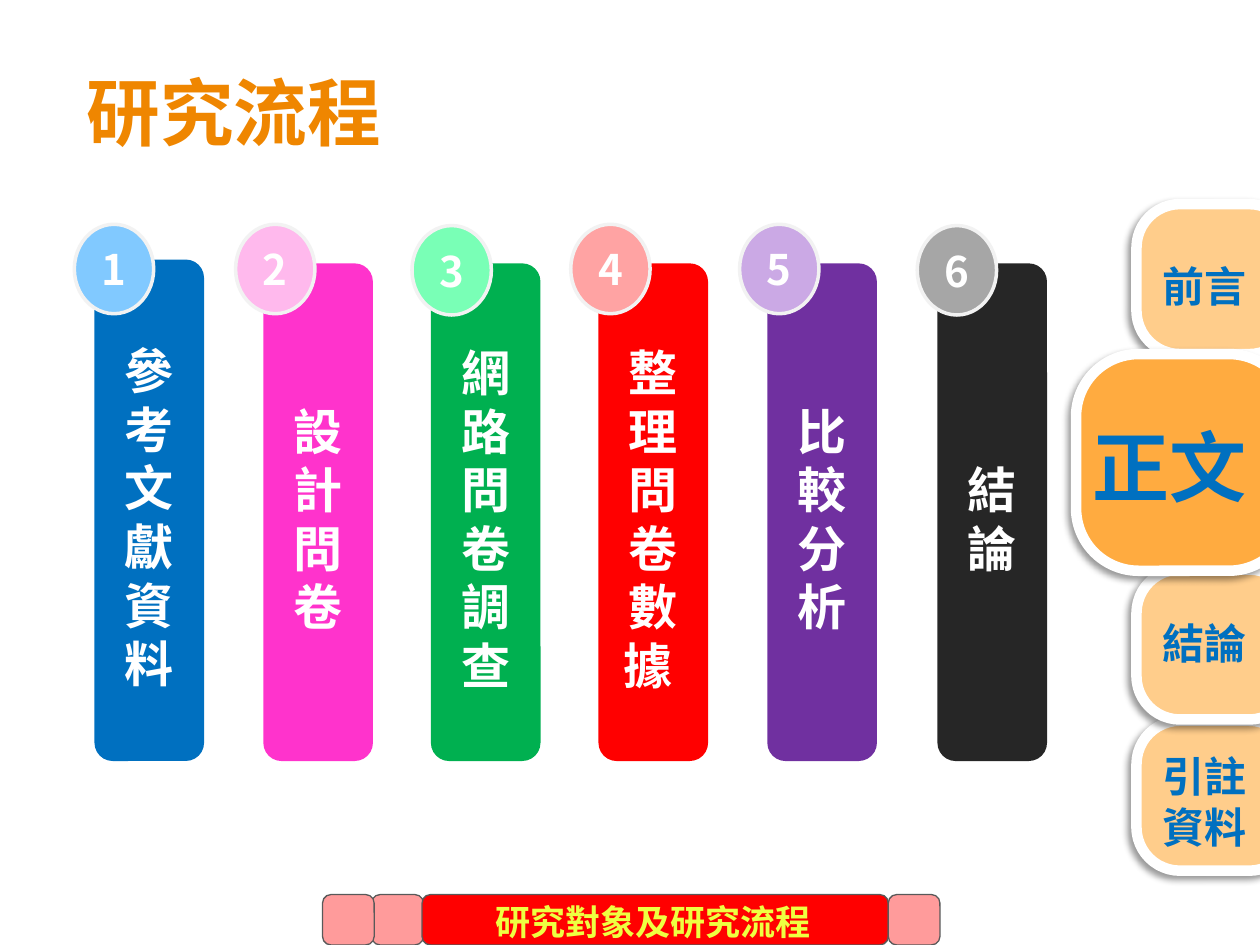
from pptx import Presentation
from pptx import util as u
from pptx.dml.color import RGBColor
from pptx.enum import shapes, text
from pptx.oxml import parse_xml
from pptx.oxml.ns import nsdecls, qn
from pptx.util import Inches

COLORS = {
    "title": "EF8600", "white": "FFFFFF", "badge_line": "F2F2F2",
    "tab": "FFCD8B", "tab_active": "FFAB40", "tab_text": "0070C0",
    "step": "FF9B9B", "step_active": "FF0000", "step_line": "595959",
    "step_text": "EEFF41",
}
SC, TC, KR = (f"Noto Sans CJK {region}" for region in ("SC", "TC", "KR"))

# label, column left, column top, column fill, badge left, badge top, badge fill
COLUMNS = [
    ("參考文獻資料", 0.75, 2.06, "0070C0", 0.59, 1.78, "81C9FF"),
    ("設計問卷", 2.09, 2.09, "FF33CC", 1.87, 1.78, "FFB9ED"),
    ("網路問卷調查", 3.42, 2.09, "00B050", 3.27, 1.79, "79FFB6"),
    ("整理問卷數據 ", 4.75, 2.09, "FF0000", 4.53, 1.78, "FFA3A3"),
    ("比較分析", 6.09, 2.09, "7030A0", 5.87, 1.78, "CBA9E5"),
    ("結論", 7.44, 2.09, "262626", 7.28, 1.79, "A6A6A6"),
]
COLUMN_BOTTOM = 6.04

# lines, tab box, text box, size, fill
TABS = [
    (["引註", "資料"], (9.02, 5.72, 1.24, 1.19), (9.12, 5.9, 0.88, 0.91), 24, "tab"),
    (["結論"], (9.02, 4.52, 1.24, 1.19), (9.12, 4.85, 0.88, 0.5), 24, "tab"),
    (["前言"], (9.02, 1.62, 1.24, 1.19), (9.12, 2.02, 0.88, 0.5), 24, "tab"),
    (["正文"], (8.54, 2.81, 1.71, 1.72), (8.56, 3.28, 1.44, 0.84), 44, "tab_active"),
]

# left, width, fill
STEPS = [(2.95, 0.41, "step"), (3.35, 3.7, "step_active"),
         (2.56, 0.41, "step"), (7.05, 0.41, "step")]


def rgb(value):
    return RGBColor.from_string(COLORS.get(value, value))


def write(tf, lines, size, color, latin, east_asian, align=text.PP_ALIGN.CENTER,
          spacing=None):
    """Fill a text frame with bold, vertically centred paragraphs."""
    tf.vertical_anchor = text.MSO_ANCHOR.MIDDLE
    for i, line in enumerate(lines):
        p = tf.add_paragraph() if i else tf.paragraphs[0]
        p.alignment = align
        if spacing:
            p.line_spacing = u.Pt(spacing)
        r = p.add_run()
        r.text = line
        r.font.size, r.font.bold, r.font.name = u.Pt(size), True, latin
        r.font.color.rgb = rgb(color)
        ea = r._r.get_or_add_rPr().makeelement(qn("a:ea"), {"typeface": east_asian})
        r._r.rPr.find(qn("a:latin")).addnext(ea)


def set_insets(tf, left, top, right, bottom):
    tf.margin_left, tf.margin_top = Inches(left), Inches(top)
    tf.margin_right, tf.margin_bottom = Inches(right), Inches(bottom)


def add_block(s, kind, box, fill, line=None, width=0):
    sp = s.shapes.add_shape(kind, *map(Inches, box))
    sp.shadow.inherit = False
    sp.fill.solid()
    sp.fill.fore_color.rgb = rgb(fill)
    if line:
        sp.line.color.rgb = rgb(line)
        sp.line.width = u.Pt(width)
    else:
        sp.line.fill.background()
    return sp


def add_label(s, box, lines, size, color, wrap, spacing=None):
    tf = s.shapes.add_textbox(*map(Inches, box)).text_frame
    tf.word_wrap = wrap
    write(tf, lines, size, color, "Arial", TC, spacing=spacing)


def add_drop_shadow(sp):
    effects = sp._element.spPr.find(qn("a:effectLst"))
    effects.append(parse_xml(
        f'<a:outerShdw {nsdecls("a")} blurRad="{u.Pt(4)}" dist="{u.Pt(3)}" '
        'dir="8100000" algn="tr" rotWithShape="0"><a:srgbClr val="000000">'
        '<a:alpha val="40000"/></a:srgbClr></a:outerShdw>'))


def add_title(s):
    title = s.shapes.title
    title.left, title.top = Inches(0.59), Inches(0.47)
    title.width, title.height = Inches(9.41), Inches(0.83)
    set_insets(title.text_frame, 0.1, 0.1, 0.1, 0.1)
    write(title.text_frame, ["研究流程"], 42, "title", KR, KR, text.PP_ALIGN.LEFT)


def add_column(s, number, label, left, top, fill, badge_left, badge_top, badge_fill):
    """Add a tall bar, one character to a line, with its numbered badge."""
    bar = add_block(s, shapes.MSO_SHAPE.ROUNDED_RECTANGLE,
                    (left, top, 0.87, COLUMN_BOTTOM - top), fill)
    set_insets(bar.text_frame, 0.1, 0.15, 0.1, 0.05)
    bar.text_frame.word_wrap = True
    write(bar.text_frame, [label], 28, "white", SC, SC, spacing=33.5)

    badge = add_block(s, shapes.MSO_SHAPE.OVAL, (badge_left, badge_top, 0.63, 0.71),
                      badge_fill, "badge_line", 2)
    set_insets(badge.text_frame, 0, 0, 0, 0)
    write(badge.text_frame, [str(number)], 24, "white", SC, SC)


def add_tab(s, lines, box, text_box, size, fill):
    tab = add_block(s, shapes.MSO_SHAPE.ROUNDED_RECTANGLE, box, fill, "white", 6)
    tab.adjustments[0] = 0.29
    add_drop_shadow(tab)
    spacing = 29 if len(lines) > 1 else None
    return text_box, lines, size, "tab_text", False, spacing


def add_progress_bar(s):
    for left, width, fill in STEPS:
        add_block(s, shapes.MSO_SHAPE.ROUNDED_RECTANGLE, (left, 7.1, width, 0.4),
                  fill, "step_line", 0.75)
    add_label(s, (3.82, 7.09, 2.73, 0.44), ["研究對象及研究流程"], 20, "step_text", True)


def main():
    prs = Presentation()
    prs.slide_width, prs.slide_height = Inches(10), Inches(7.5)
    s = prs.slides.add_slide(prs.slide_layouts[5])
    add_title(s)
    add_progress_bar(s)
    for number, column in enumerate(COLUMNS, 1):
        add_column(s, number, *column)
    labels = [add_tab(s, *tab) for tab in TABS]
    for label in labels:
        add_label(s, *label)
    prs.save("out.pptx")


if __name__ == "__main__":
    main()
